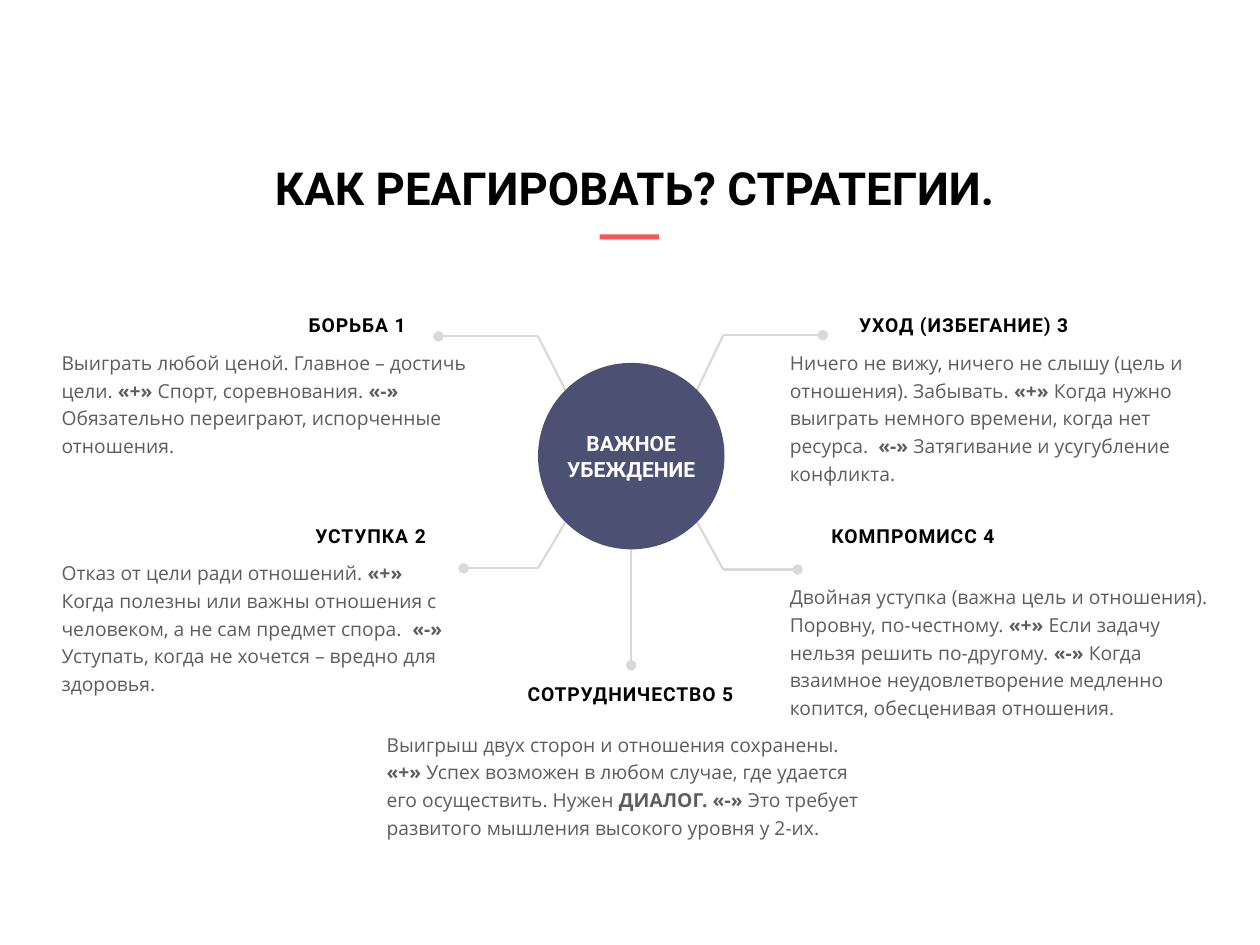
"""Builds a slide of five conflict strategies around a central belief."""
from dataclasses import dataclass
from itertools import pairwise

from lxml import etree
from pptx import Presentation
from pptx import util as u
from pptx.dml.color import RGBColor
from pptx.enum import shapes, text
from pptx.oxml.ns import qn
from pptx.slide import Slide

BLACK = RGBColor(0x00, 0x00, 0x00)
WHITE = RGBColor(0xFF, 0xFF, 0xFF)
GREY = RGBColor(0x5D, 0x5D, 0x5D)
SILVER = RGBColor(0xD9, 0xD9, 0xD9)
INDIGO = RGBColor(0x4C, 0x51, 0x73)
CORAL = RGBColor(0xF7, 0x56, 0x55)

LEFT, CENTER, RIGHT = text.PP_ALIGN.LEFT, text.PP_ALIGN.CENTER, text.PP_ALIGN.RIGHT

SPOKES = [
    [(4.49, 3.1), (4.27, 2.67), (3.48, 2.67)],
    [(4.49, 4.14), (4.27, 4.51), (3.68, 4.51)],
    [(5.53, 3.1), (5.74, 2.66), (6.53, 2.66)],
    [(5.53, 4.14), (5.74, 4.52), (6.33, 4.52)],
    [(5.01, 4.36), (5.01, 5.28)],
]

STRATEGIES = [
    ("БОРЬБА 1", RIGHT, (0.81, 2.3), (0.39, 2.75, 3.44, 0.92),
     "Выиграть любой ценой. Главное – достичь цели. **«+»** Спорт, соревнования. "
     "**«-»** Обязательно переиграют, испорченные отношения."),
    ("УСТУПКА 2", RIGHT, (0.97, 3.97), (0.39, 4.42, 3.36, 1.05),
     "Отказ от цели ради отношений.** «+» **Когда полезны или важны отношения с "
     "человеком, а не сам предмет спора.  **«-»** Уступать, когда не хочется – "
     "вредно для здоровья."),
    ("УХОД (ИЗБЕГАНИЕ) 3", LEFT, (6.72, 2.3), (6.17, 2.75, 3.52, 1.31),
     "Ничего не вижу, ничего не слышу (цель и отношения). Забывать. **«+» **Когда "
     "нужно выиграть немного времени, когда нет ресурса.  **«-»** Затягивание и "
     "усугубление конфликта."),
    ("КОМПРОМИСС 4", LEFT, (6.5, 3.97), (6.17, 4.61, 3.67, 1.29),
     "Двойная уступка (важна цель и отношения). Поровну, по-честному. **«+» **Если "
     "задачу нельзя решить по-другому. **«-»** Когда взаимное неудовлетворение "
     "медленно копится, обесценивая отношения."),
    ("СОТРУДНИЧЕСТВО 5", CENTER, (3.75, 5.23), (2.97, 5.78, 4.06, 0.87),
     "Выигрыш двух сторон и отношения сохранены. **«+» **Успех возможен в любом "
     "случае, где удается его осуществить. Нужен **ДИАЛОГ. «-»** Это требует "
     "развитого мышления высокого уровня у 2-их."),
]


@dataclass
class StrategyMap:
    """Holds the slide and its style and draws each kind of element."""

    slide: Slide
    heading_font: str = "Roboto"
    body_font: str = "Open Sans"

    def style(self, paragraph, font, size, color, bold=False, align=LEFT):
        """Sets alignment and font of a whole paragraph."""
        paragraph.alignment = align
        paragraph.font.name = font
        paragraph.font.size = u.Pt(size)
        paragraph.font.color.rgb = color
        paragraph.font.bold = bold

    def textbox(self, box):
        """Adds a wrapping text box and returns its frame."""
        frame = self.slide.shapes.add_textbox(*map(u.Inches, box)).text_frame
        frame.word_wrap = True
        return frame

    def title(self, wording, box):
        """Adds the slide title."""
        paragraph = self.textbox(box).paragraphs[0]
        paragraph.text = wording
        self.style(paragraph, self.heading_font, 26, BLACK, True, CENTER)

    def heading(self, wording, align, corner):
        """Adds a letter-spaced strategy name."""
        frame = self.textbox((*corner, 2.51, 0.42))
        frame.vertical_anchor = text.MSO_ANCHOR.BOTTOM
        paragraph = frame.paragraphs[0]
        paragraph.text = wording
        self.style(paragraph, self.heading_font, 11, BLACK, True, align)
        paragraph._p.pPr.find(qn("a:defRPr")).set("spc", "50")
        paragraph.runs[0].font._element.set("spc", "50")

    def description(self, wording, box):
        """Adds a description whose parts between double asterisks are bold."""
        frame = self.textbox(box)
        frame.margin_top = 0
        paragraph = frame.paragraphs[0]
        paragraph.line_spacing = 1.2
        self.style(paragraph, self.body_font, 11, GREY)
        for index, part in enumerate(wording.split("**")):
            run = paragraph.add_run()
            run.text = part
            run.font.bold = index % 2 == 1

    def spoke(self, points):
        """Adds a bent line that ends in a dot."""
        for start, end in pairwise(points):
            line = self.slide.shapes.add_connector(
                shapes.MSO_CONNECTOR.STRAIGHT, *map(u.Inches, start + end))
            line.line.color.rgb = SILVER
            line.line.width = u.Pt(1.25)
            etree.SubElement(line._element.spPr, qn("a:effectLst"))
        etree.SubElement(line.line._get_or_add_ln(), qn("a:tailEnd"), type="oval")

    def shape(self, kind, box, color):
        """Adds a plain filled shape."""
        shape = self.slide.shapes.add_shape(kind, *map(u.Inches, box))
        shape.shadow.inherit = False
        shape.fill.solid()
        shape.fill.fore_color.rgb = color
        shape.line.fill.background()
        return shape

    def hub(self, wording, box):
        """Adds the central circle with its label."""
        frame = self.shape(shapes.MSO_SHAPE.OVAL, box, INDIGO).text_frame
        frame.word_wrap = True
        frame.margin_left = frame.margin_right = 0
        frame.vertical_anchor = text.MSO_ANCHOR.MIDDLE
        paragraph = frame.paragraphs[0]
        paragraph.text = wording
        self.style(paragraph, self.heading_font, 12, WHITE, True, CENTER)


def main():
    """Builds and saves the slide."""
    deck = Presentation()
    deck.slide_width, deck.slide_height = u.Inches(10), u.Inches(7.5)
    page = StrategyMap(deck.slides.add_slide(deck.slide_layouts[6]))
    page.title("КАК РЕАГИРОВАТЬ? СТРАТЕГИИ.", (0.78, 1.22, 8.52, 0.44))
    page.shape(shapes.MSO_SHAPE.RECTANGLE, (4.76, 1.86, 0.47, 0.04), CORAL)
    for points in SPOKES:
        page.spoke(points)
    page.hub("ВАЖНОЕ УБЕЖДЕНИЕ", (4.27, 2.88, 1.48, 1.48))
    for name, align, corner, box, wording in STRATEGIES:
        page.heading(name, align, corner)
        page.description(wording, box)
    deck.save("out.pptx")


if __name__ == "__main__":
    main()
